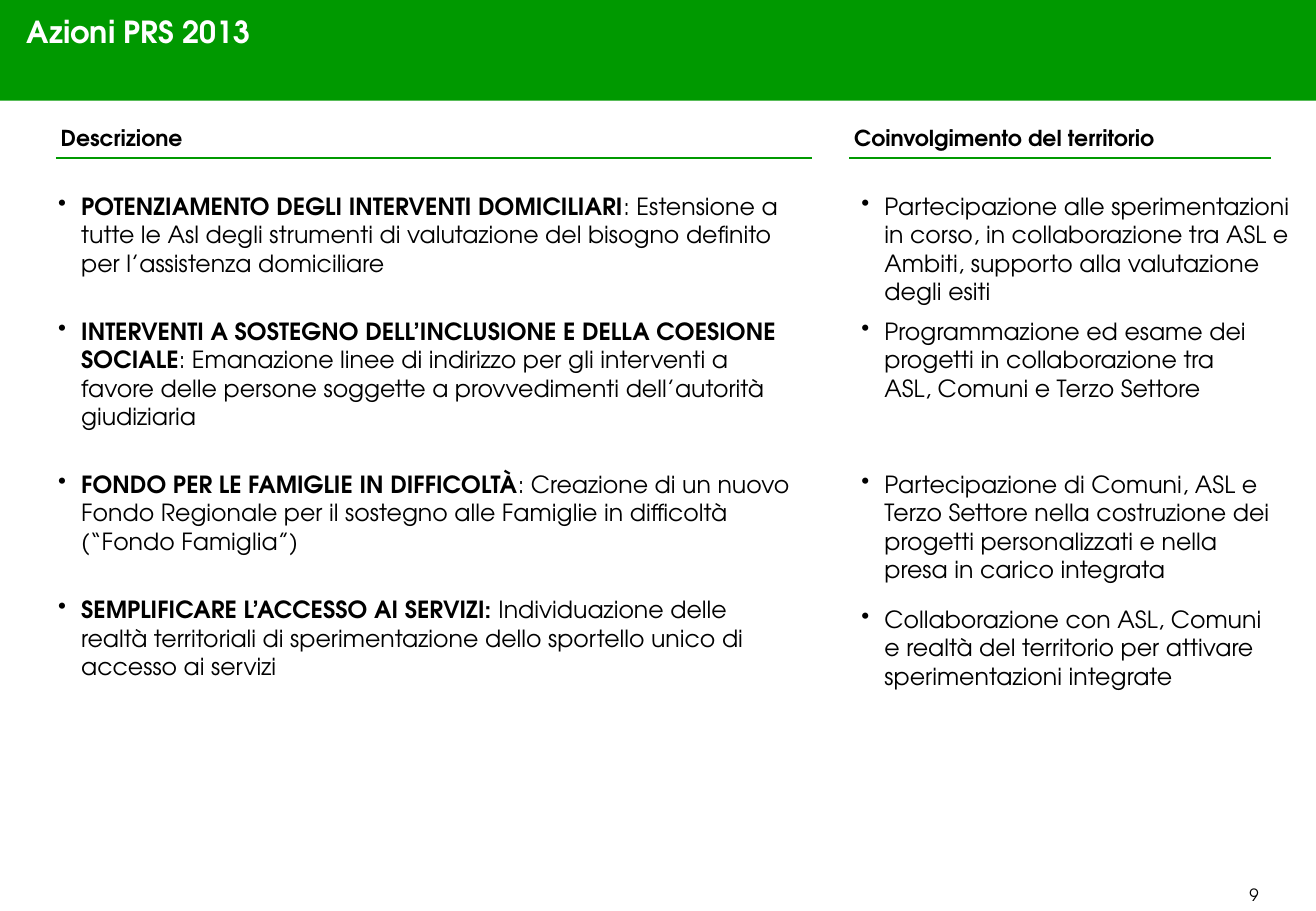
from pptx import Presentation
from pptx.dml.color import RGBColor
from pptx.enum.shapes import MSO_CONNECTOR as Connector, MSO_SHAPE as Shape
from pptx.enum.text import MSO_ANCHOR as Anchor, MSO_AUTO_SIZE as AutoSize, PP_ALIGN as Align
from pptx.oxml.ns import qn
from pptx.util import Inches, Pt
from lxml import etree

COLORS = {"green": "009900", "black": "000000", "white": "FFFFFF"}
FONT = "TeX Gyre Adventor"
WIDTH, HEIGHT = 10.83, 7.5
LEFT_TEXT, LEFT_RULE, LEFT_END = 0.38, 0.46, 6.68
RIGHT, RIGHT_END = 6.99, 10.46
HEADER_TOP, RULE_TOP = 0.98, 1.3


def style(paragraph, size, color="black", bold=False, align=Align.LEFT):
    paragraph.alignment = align
    paragraph.font.name = FONT
    paragraph.font.size = Pt(size)
    paragraph.font.bold = bold
    paragraph.font.color.rgb = RGBColor.from_string(COLORS[color])


def add_text(left, top, width, height, runs, size, bold=False, align=Align.LEFT):
    box = slide.shapes.add_textbox(Inches(left), Inches(top), Inches(width), Inches(height))
    box.text_frame.word_wrap = True
    paragraph = box.text_frame.paragraphs[0]
    style(paragraph, size, bold=bold, align=align)
    for text, run_bold in runs:
        run = paragraph.add_run()
        run.text = text
        if run_bold:
            run.font.bold = True
    return box


presentation = Presentation()
presentation.slide_width, presentation.slide_height = Inches(WIDTH), Inches(HEIGHT)
slide = presentation.slides.add_slide(presentation.slide_layouts.get_by_name("Title Only"))

# Green band, behind the title
band = slide.shapes.add_shape(Shape.RECTANGLE, 0, 0, Inches(WIDTH), Inches(0.83))
band.shadow.inherit = False
band.fill.solid()
band.fill.fore_color.rgb = RGBColor.from_string(COLORS["green"])
band.line.fill.background()
slide.shapes._spTree.insert(2, band._element)

# Title
title = slide.shapes.title
title.left, title.top, title.width, title.height = map(Inches, (0.12, 0.06, 10.49, 0.4))
title.text_frame.text = "Azioni PRS 2013"
title.text_frame.vertical_anchor = Anchor.TOP
title.text_frame.auto_size = AutoSize.NONE
style(title.text_frame.paragraphs[0], 18, "white", bold=True)

# Column headers with their rules
headers = [
    ("Descrizione", LEFT_RULE, LEFT_END, 1.1),
    ("Coinvolgimento del territorio", RIGHT, RIGHT_END, 2.6),
]
for text, left, right, width in headers:
    header = add_text(left, HEADER_TOP, width, RULE_TOP - HEADER_TOP, [(text, False)], 13, bold=True)
    header.text_frame.word_wrap = False
    header.text_frame.margin_left = header.text_frame.margin_right = Inches(0.04)
    rule = slide.shapes.add_connector(
        Connector.STRAIGHT, Inches(left), Inches(RULE_TOP), Inches(right), Inches(RULE_TOP))
    rule.line.color.rgb = RGBColor.from_string(COLORS["green"])
    rule.line.width = Pt(1.5)
    etree.SubElement(rule._element.spPr, qn("a:effectLst"))

# Actions: top, lines, bold lead, description; then top, width, lines, involvement
actions = [
    (1.53, 3, "POTENZIAMENTO DEGLI INTERVENTI DOMICILIARI",
     ": Estensione a tutte le Asl degli strumenti di valutazione del bisogno definito "
     "per l’assistenza domiciliare",
     1.53, 3.84, 4, "Partecipazione alle sperimentazioni in corso, in collaborazione tra ASL e "
     "Ambiti, supporto alla valutazione degli esiti"),
    (2.56, 4, "INTERVENTI A SOSTEGNO DELL’INCLUSIONE E DELLA COESIONE SOCIALE",
     ": Emanazione linee di indirizzo per gli interventi a favore delle persone soggette "
     "a provvedimenti dell’autorità giudiziaria",
     2.56, 3.46, 3, "Programmazione ed esame dei progetti in collaborazione tra ASL, Comuni "
     "e Terzo Settore"),
    (3.82, 3, "FONDO PER LE FAMIGLIE IN DIFFICOLTÀ",
     ": Creazione di un nuovo Fondo Regionale per il sostegno alle Famiglie in difficoltà "
     "(“Fondo Famiglia”)",
     3.82, 3.62, 4, "Partecipazione di Comuni, ASL e Terzo Settore nella costruzione dei "
     "progetti personalizzati e nella presa in carico integrata"),
    (4.85, 3, "SEMPLIFICARE L’ACCESSO AI SERVIZI: ",
     "Individuazione delle realtà territoriali di sperimentazione dello sportello unico "
     "di accesso ai servizi",
     4.93, 3.62, 3, "Collaborazione con ASL, Comuni e realtà del territorio per attivare "
     "sperimentazioni integrate"),
]
for top, lines, lead, description, side_top, side_width, side_lines, involvement in actions:
    cells = [
        (LEFT_TEXT, top, LEFT_END - LEFT_TEXT, lines, [(lead, True), (description, False)]),
        (RIGHT, side_top, side_width, side_lines, [(involvement, False)]),
    ]
    for left, cell_top, width, line_count, runs in cells:
        box = add_text(left, cell_top, width, 0.1 + 0.235 * line_count, runs, 14)
        properties = box.text_frame.paragraphs[0]._p.get_or_add_pPr()
        properties.set("marL", str(Inches(0.19)))
        properties.set("indent", str(-Inches(0.19)))
        bullet = etree.Element(qn("a:buChar"), char="•")
        properties.find(qn("a:defRPr")).addprevious(bullet)

# Page number
add_text(9.81, 7.23, WIDTH - 9.81, HEIGHT - 7.23, [("9", False)], 10, align=Align.CENTER)

presentation.save("out.pptx")
